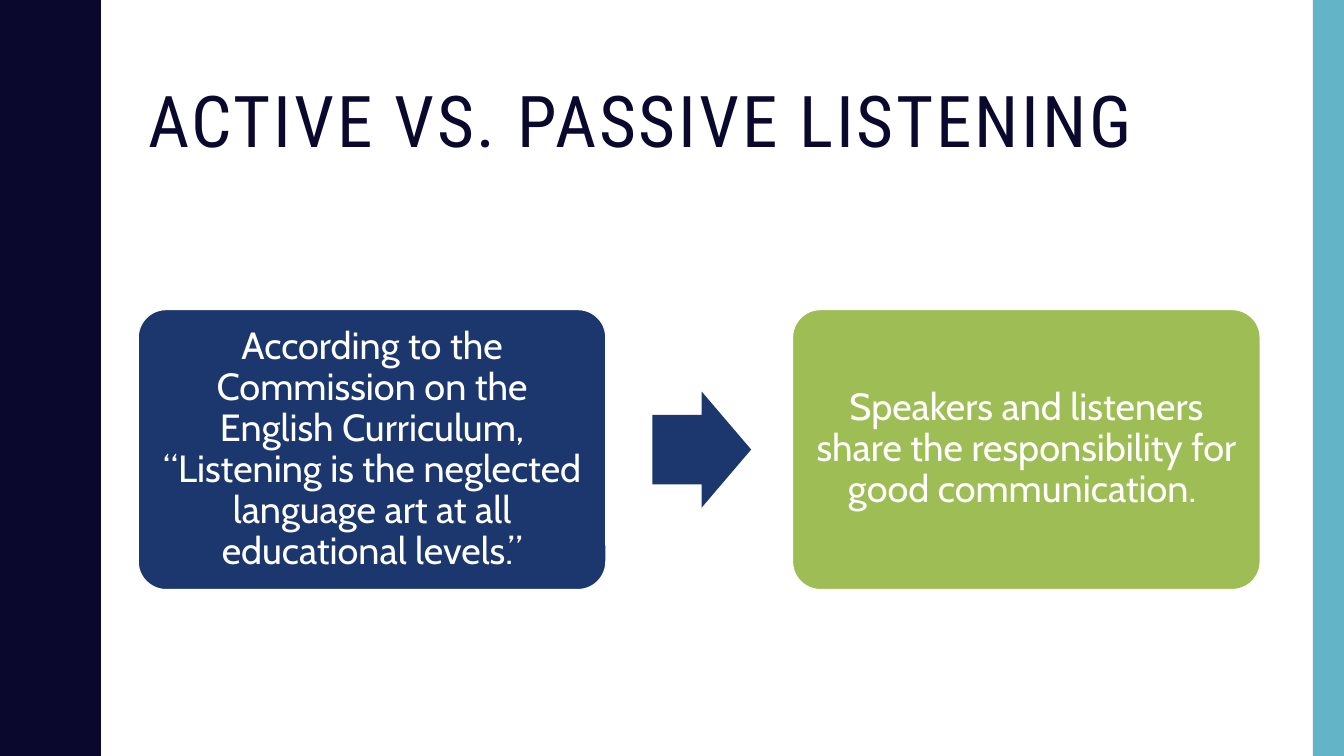
from lxml import etree
from pptx import Presentation
from pptx import util as u
from pptx.dml.color import RGBColor
from pptx.enum import shapes, text

NAVY = RGBColor(0x0B, 0x08, 0x2E)
BLUE = RGBColor(0x1B, 0x37, 0x6E)
GREEN = RGBColor(0x9E, 0xBE, 0x55)
TEAL = RGBColor(0x62, 0xB4, 0xC6)
WHITE = RGBColor(0xFF, 0xFF, 0xFF)

TITLE = "ACTIVE VS. PASSIVE LISTENING"
CARDS = [
    ("According to the Commission on the English Curriculum, “Listening is the "
     "neglected language art at all educational levels.”", BLUE),
    ("Speakers and listeners share the responsibility for good communication. ", GREEN),
]
TITLE_FONT = {"name": "Roboto Condensed", "size": u.Pt(51)}
CARD_FONT = {"name": "Cabin", "size": u.Pt(27)}

WIDTH, HEIGHT = 13.33, 7.5
LEFT, RIGHT = 1.37, 12.5
CARD_TOP, CARD_W, CARD_H = 3.07, 4.64, 2.78
ARROW_LEFT, ARROW_W, ARROW_H = 6.47, 0.98, 1.15
BAR_W = 0.31
WAVES = 5
# Outward half of one wave, from trough to crest
HALF_WAVE = [(0.78, 0), (0.78, 0.07), (0.79, 0.14), (0.8, 0.2), (0.81, 0.25),
             (0.83, 0.29), (0.85, 0.33), (0.87, 0.38), (0.89, 0.42), (0.91, 0.46),
             (0.93, 0.5), (0.95, 0.55), (0.96, 0.61), (0.97, 0.68), (0.97, 0.75)]


def paint(shape, color, line=None):
    shape.shadow.inherit = False
    shape.fill.solid()
    shape.fill.fore_color.rgb = color
    if line is None:
        shape.line.fill.background()
    else:
        shape.line.color.rgb = line
        shape.line.width = u.Pt(1)


def add_block(page, kind, left, top, width, height, color, adjust=(), line=None):
    block = page.shapes.add_shape(kind, *map(u.Inches, (left, top, width, height)))
    for index, value in enumerate(adjust):
        block.adjustments[index] = value
    paint(block, color, line)
    return block


def write(box, words, font, color, align, inset=0.1):
    """Fill a box with one wrapped, vertically centred paragraph."""
    frame = box.text_frame
    margins = {f"margin_{side}": u.Inches(inset) for side in ("left", "right", "top", "bottom")}
    for key, value in {"word_wrap": True, "vertical_anchor": text.MSO_ANCHOR.MIDDLE,
                       **margins}.items():
        setattr(frame, key, value)
    para = frame.paragraphs[0]
    para.alignment, para.line_spacing = align, 0.9
    span = para.add_run()
    span.text = words
    for key, value in font.items():
        setattr(span.font, key, value)
    span.font.color.rgb = color
    return span


def add_wavy_edge(page):
    period = HEIGHT / WAVES
    wave = HALF_WAVE + [(x, period - y) for x, y in HALF_WAVE[-2::-1]]
    edge = [(x, y + number * period) for number in range(WAVES) for x, y in wave]
    outline = page.shapes.build_freeform(0, 0, scale=u.Inches(1))
    outline.add_line_segments(edge + [(0, HEIGHT)], close=True)
    paint(outline.convert_to_shape(), NAVY)


def add_title(page):
    box = page.shapes.add_textbox(*map(u.Inches, (LEFT, 0.42, RIGHT - LEFT, 1.63)))
    span = write(box, TITLE, TITLE_FONT, NAVY, text.PP_ALIGN.LEFT)
    span.font._element.set("spc", "200")


def add_cards(page):
    kinds = shapes.MSO_SHAPE
    for column, (words, color) in enumerate(CARDS):
        left = LEFT + column * (RIGHT - LEFT - CARD_W)
        card = add_block(page, kinds.ROUNDED_RECTANGLE, left, CARD_TOP, CARD_W, CARD_H,
                         color, [0.1], WHITE)
        write(card, words, CARD_FONT, WHITE, text.PP_ALIGN.CENTER, 0.11)
    add_block(page, kinds.RIGHT_ARROW, ARROW_LEFT, CARD_TOP + (CARD_H - ARROW_H) / 2,
              ARROW_W, ARROW_H, BLUE, [0.6, 0.5])


def main():
    deck = Presentation()
    deck.slide_width, deck.slide_height = u.Inches(WIDTH), u.Inches(HEIGHT)
    page = deck.slides.add_slide(deck.slide_layouts[6])
    add_wavy_edge(page)
    add_block(page, shapes.MSO_SHAPE.RECTANGLE, WIDTH - BAR_W, 0, BAR_W, HEIGHT, TEAL)
    add_title(page)
    add_cards(page)
    deck.save("out.pptx")


if __name__ == "__main__":
    main()
